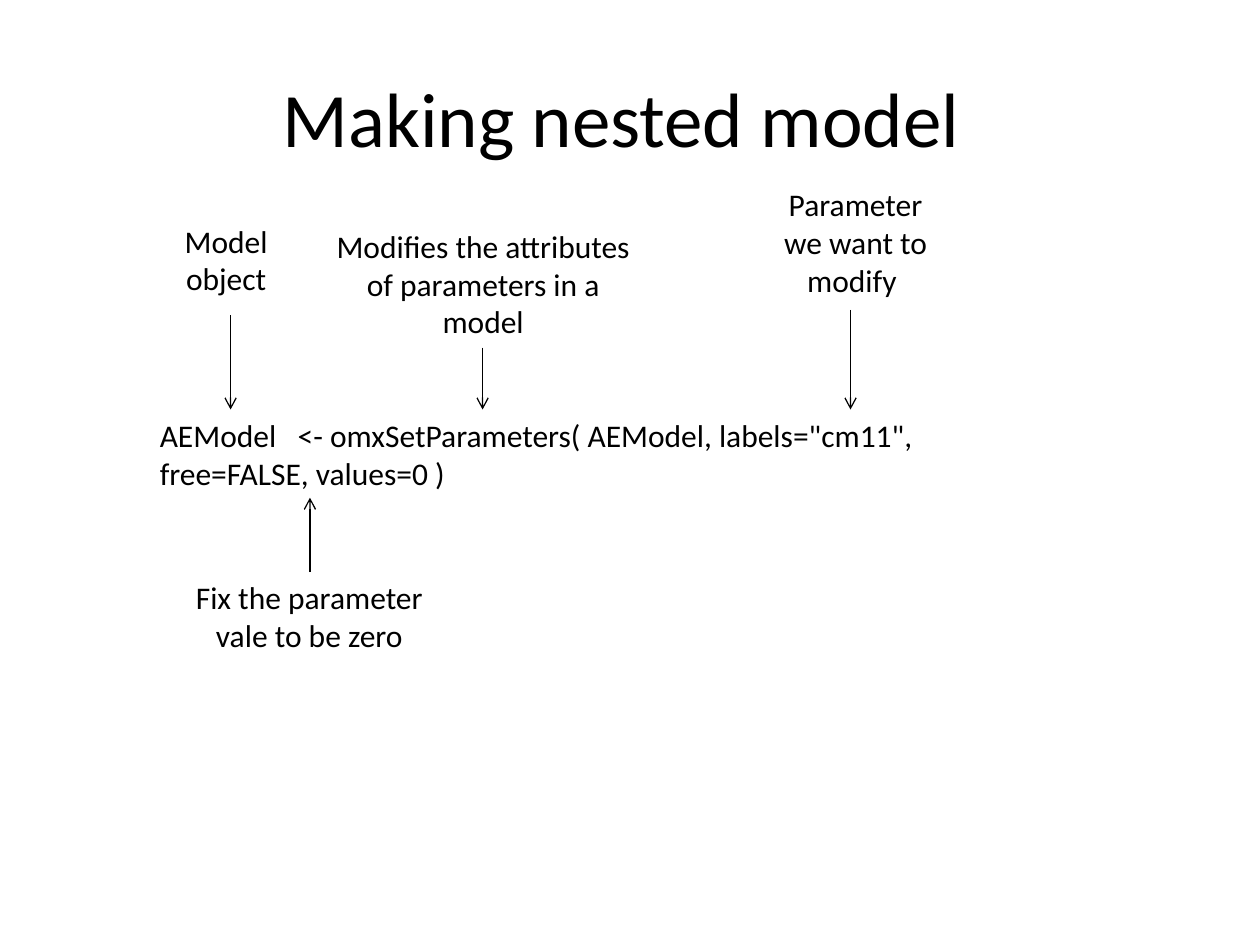
from lxml.etree import SubElement
from pptx import Presentation
from pptx.dml.color import RGBColor
from pptx.enum.shapes import MSO_CONNECTOR
from pptx.enum.text import MSO_ANCHOR, PP_ALIGN
from pptx.oxml.ns import qn
from pptx.util import Inches, Pt

COLOURS = {"ink": "000000", "paper": "FFFFFF"}
FONT = "Calibri"
CODE = 'AEModel   <- omxSetParameters( AEModel, labels="cm11", free=FALSE, values=0 )'
CODE_BOX = (1.17, 3.25, 6.67, 0.71)
CODE_TOP, CODE_BOTTOM = 3.25, 3.95

NOTES = [
    (["Modifies the attributes of parameters in a model"],
     (2.5, 1.75, 2.67, 1.01), (3.83, 2.76, CODE_TOP)),
    (["Parameter", "we want to modify "],
     (6.08, 1.42, 1.42, 1.01), (6.75, 2.46, CODE_TOP)),
    (["Fix the parameter vale to be zero"],
     (1.33, 4.54, 2.25, 0.71), (2.46, 4.54, CODE_BOTTOM)),
    (["Model object"],
     (1.17, 1.71, 1.25, 0.71), (1.83, 2.5, CODE_TOP)),
]


def write_text(frame, lines, size=18, align=PP_ALIGN.LEFT, anchor=MSO_ANCHOR.TOP):
    frame.word_wrap = True
    frame.vertical_anchor = anchor
    for index, line in enumerate(lines):
        para = frame.add_paragraph() if index else frame.paragraphs[0]
        para.alignment = align
        span = para.add_run()
        span.text = line
        span.font.size = Pt(size)
        span.font.name = FONT
        span.font.color.rgb = RGBColor.from_string(COLOURS["ink"])


def add_title(page, box, text):
    title = page.shapes.title
    title.left, title.top, title.width, title.height = map(Inches, box)
    write_text(title.text_frame, [text], size=44,
               align=PP_ALIGN.CENTER, anchor=MSO_ANCHOR.MIDDLE)


def add_text(page, box, lines, **text_format):
    shape = page.shapes.add_textbox(*map(Inches, box))
    write_text(shape.text_frame, lines, **text_format)


def add_arrow(page, x, start, end):
    arrow = page.shapes.add_connector(
        MSO_CONNECTOR.STRAIGHT, Inches(x), Inches(start), Inches(x), Inches(end))
    arrow.line.color.rgb = RGBColor.from_string(COLOURS["ink"])
    arrow.line.width = Pt(0.75)
    SubElement(arrow.line._get_or_add_ln(), qn("a:tailEnd"), type="arrow")
    SubElement(arrow._element.spPr, qn("a:effectLst"))


def add_note(page, box, lines, arrow):
    add_text(page, box, lines, align=PP_ALIGN.CENTER)
    add_arrow(page, *arrow)


def main():
    deck = Presentation()
    deck.slide_width, deck.slide_height = Inches(10), Inches(7.5)
    page = deck.slides.add_slide(deck.slide_layouts[5])
    page.background.fill.solid()
    page.background.fill.fore_color.rgb = RGBColor.from_string(COLOURS["paper"])
    add_title(page, (0.5, 0.3, 9, 1.25), "Making nested model ")
    add_text(page, CODE_BOX, [CODE])
    for lines, box, arrow in NOTES:
        add_note(page, box, lines, arrow)
    deck.save("out.pptx")


if __name__ == "__main__":
    main()
